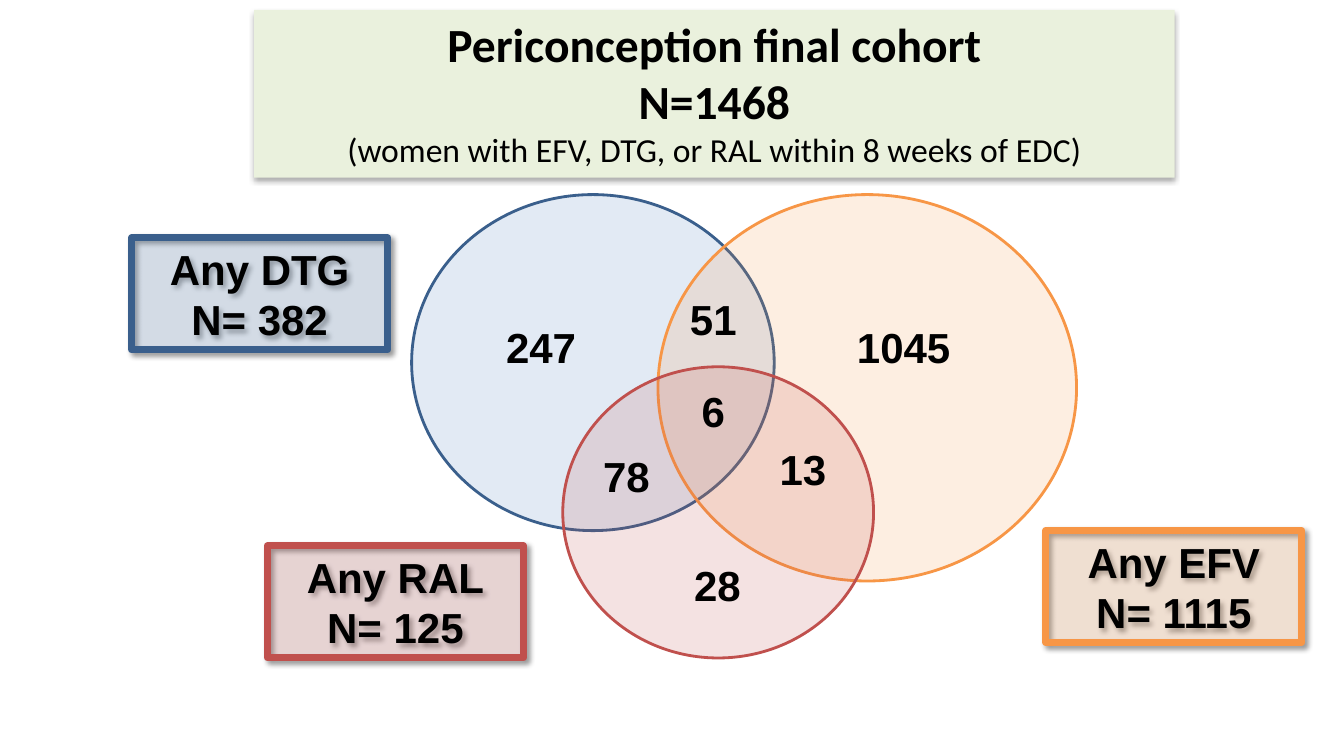
from lxml import etree
from pptx import Presentation
from pptx.dml.color import RGBColor
from pptx.enum.shapes import MSO_SHAPE
from pptx.enum.text import MSO_ANCHOR, MSO_AUTO_SIZE, PP_ALIGN
from pptx.oxml.ns import qn
from pptx.util import Pt

RECT, OVAL = MSO_SHAPE.RECTANGLE, MSO_SHAPE.OVAL
TOP, MIDDLE = MSO_ANCHOR.TOP, MSO_ANCHOR.MIDDLE
FIXED, GROW = MSO_AUTO_SIZE.NONE, MSO_AUTO_SIZE.SHAPE_TO_FIT_TEXT
CENTER = PP_ALIGN.CENTER

BLACK = "000000"
# fill and outline of each drug
COLOURS = {"DTG": ("4F81BD", "3A5F8C"),
           "EFV": ("F79646", "F79646"),
           "RAL": ("C0504D", "C0504D")}
HEADING = {"name": "Calibri", "size": Pt(34), "bold": True}
SUBHEADING = {"name": "Calibri", "size": Pt(24), "bold": False}
FIGURE = {"name": "Arial", "size": Pt(30), "bold": True}


def rgb(value):
    return RGBColor.from_string(value)


def place(s, x, y, w, h):
    s.left, s.top, s.width, s.height = Pt(x), Pt(y), Pt(w), Pt(h)


def paint(s, fill, opacity=100):
    s.fill.solid()
    s.fill.fore_color.rgb = rgb(fill)
    if opacity < 100:
        colour = s.element.spPr.find(qn("a:solidFill"))[0]
        etree.SubElement(colour, qn("a:alpha"), val=str(opacity * 1000))


def outline(s, colour, width):
    s.line.color.rgb = rgb(colour)
    s.line.width = Pt(width)


def cast_shadow(s, opacity, blur, distance, angle):
    s.shadow.inherit = False
    effects = s.element.spPr.find(qn("a:effectLst"))
    shadow = etree.SubElement(
        effects, qn("a:outerShdw"), blurRad=str(Pt(blur)),
        dist=str(Pt(distance)), dir=str(angle * 60000), rotWithShape="0")
    colour = etree.SubElement(shadow, qn("a:srgbClr"), val=BLACK)
    etree.SubElement(colour, qn("a:alpha"), val=str(opacity * 1000))


def write(s, lines, anchor=TOP, auto_size=GROW):
    tf = s.text_frame
    frame = {"word_wrap": True, "auto_size": auto_size, "vertical_anchor": anchor,
             "margin_left": Pt(7.2), "margin_right": Pt(7.2),
             "margin_top": Pt(3.6), "margin_bottom": Pt(3.6)}
    for key, value in frame.items():
        setattr(tf, key, value)
    for i, (text, style) in enumerate(lines):
        p = tf.add_paragraph() if i else tf.paragraphs[0]
        p.alignment = CENTER
        r = p.add_run()
        r.text = text
        r.font.color.rgb = rgb(BLACK)
        for key, value in style.items():
            setattr(r.font, key, value)


def add_title(slide, box):
    s = slide.shapes.title
    place(s, *box)
    paint(s, "EAF1DD")
    cast_shadow(s, 32, 3.5, 2.2, 90)
    write(s, [("Periconception final cohort", HEADING),
              ("N=1468", HEADING),
              ("(women with EFV, DTG, or RAL within 8 weeks of EDC)", SUBHEADING)],
          auto_size=FIXED)


def add_venn(slide, x, y):
    # circles: offset and size from the top left of the diagram
    circles = {"DTG": (0, 0, 259, 240),
               "EFV": (176, 0, 299, 276),
               "RAL": (108, 123, 222, 208)}
    for drug, (dx, dy, w, h) in circles.items():
        s = slide.shapes.add_shape(OVAL, Pt(x + dx), Pt(y + dy), Pt(w), Pt(h))
        fill, edge = COLOURS[drug]
        s.shadow.inherit = False
        paint(s, fill, 16)
        outline(s, edge, 2)

    # women counted in each region
    counts = [("247", 47, 87), ("1045", 306, 87), ("6", 170, 133), ("78", 108, 179),
              ("13", 234, 174), ("28", 173, 257), ("51", 170, 67)]
    for text, dx, dy in counts:
        s = slide.shapes.add_textbox(Pt(x + dx), Pt(y + dy), Pt(91), Pt(44))
        write(s, [(text, FIGURE)])


def add_total(slide, drug, total, x, y):
    s = slide.shapes.add_shape(RECT, Pt(x), Pt(y), Pt(183), Pt(80))
    fill, edge = COLOURS[drug]
    paint(s, fill, 17)
    outline(s, edge, 5)
    cast_shadow(s, 40, 4, 3, 45)
    write(s, [(f"Any {drug}", FIGURE), (f"N= {total}", FIGURE)], anchor=MIDDLE)


def main():
    prs = Presentation()
    prs.slide_width, prs.slide_height = Pt(960), Pt(540)
    slide = prs.slides.add_slide(prs.slide_layouts[5])
    add_title(slide, (181.5, 7, 657.5, 120))
    add_venn(slide, 294, 139)
    for drug, total, x, y in [("DTG", 382, 94, 170), ("RAL", 125, 191, 390),
                              ("EFV", 1115, 747, 379)]:
        add_total(slide, drug, total, x, y)
    prs.save("out.pptx")


if __name__ == "__main__":
    main()
